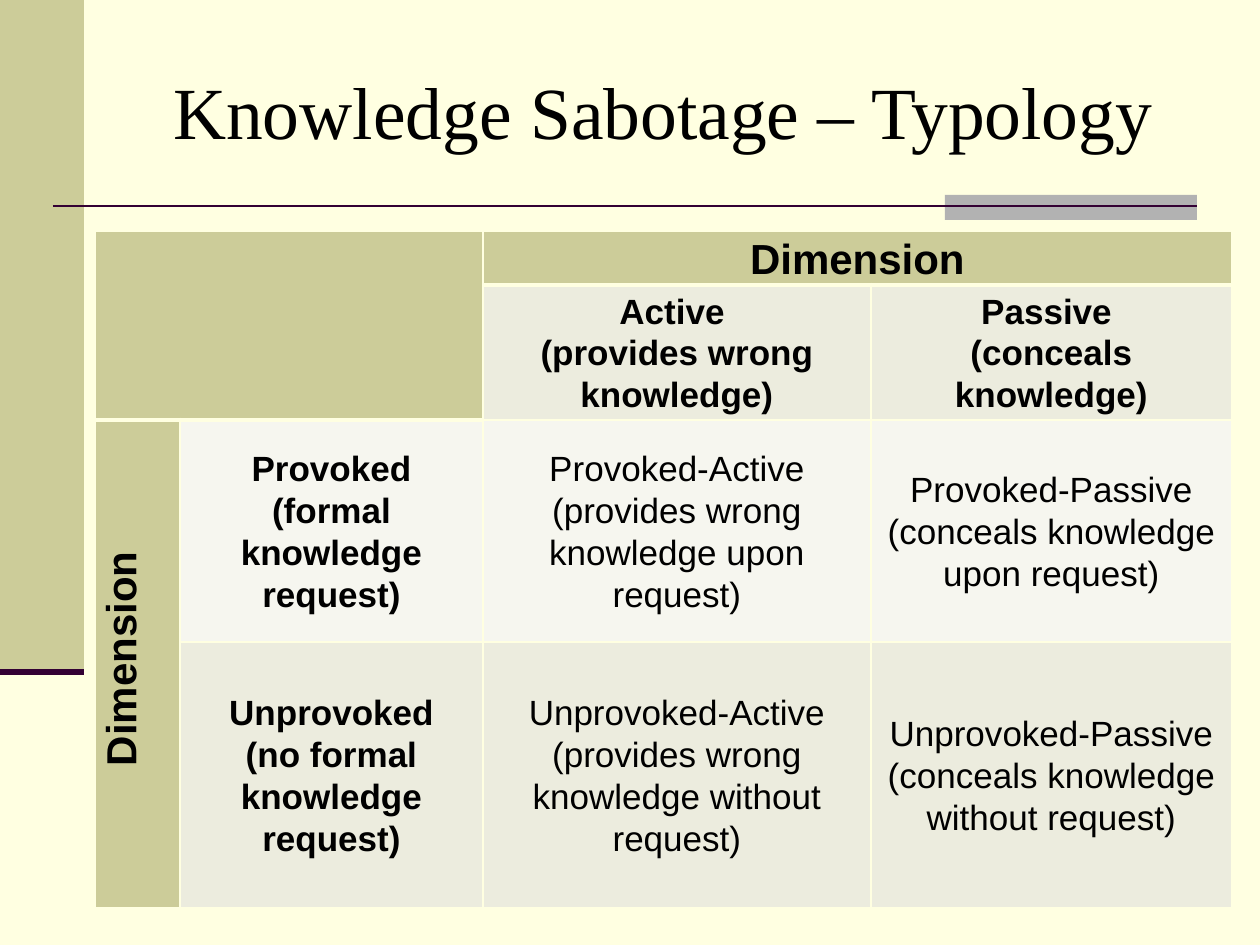
from lxml import etree
from pptx import Presentation
from pptx.dml.color import RGBColor
from pptx.enum.shapes import MSO_CONNECTOR, MSO_SHAPE
from pptx.enum.text import MSO_ANCHOR, PP_ALIGN
from pptx.oxml.ns import qn
from pptx.util import Pt

RECTANGLE = MSO_SHAPE.RECTANGLE
STRAIGHT = MSO_CONNECTOR.STRAIGHT
MIDDLE = MSO_ANCHOR.MIDDLE
CENTER = PP_ALIGN.CENTER

PX = 914400 // 126
CREAM = RGBColor(0xFF, 0xFF, 0xE1)
KHAKI = RGBColor(0xCC, 0xCC, 0x99)
GRAY = RGBColor(0xB2, 0xB2, 0xB2)
PLUM = RGBColor(0x33, 0x00, 0x33)
BLACK = RGBColor(0x00, 0x00, 0x00)
BAND_DARK = RGBColor(0xEC, 0xEC, 0xDE)
BAND_LIGHT = RGBColor(0xF6, 0xF6, 0xEF)

COLUMN_WIDTHS = [85, 303, 388, 361]
ROW_HEIGHTS = [48, 132, 222, 266]
SPANS = [((0, 0), (1, 1)), ((0, 2), (0, 3)), ((2, 0), (3, 0))]
THICK_BOTTOMS = {(0, 0), (0, 2), (0, 3), (1, 0), (1, 1)}
ROW_BANDS = [KHAKI, BAND_DARK, BAND_LIGHT, BAND_DARK]
TYPOLOGY = [
    [[], [], ["Dimension"], []],
    [[], [],
     ["Active ", "(provides wrong knowledge)"],
     ["Passive ", "(conceals knowledge)"]],
    [["Dimension"],
     ["Provoked", "(formal knowledge request)"],
     ["Provoked-Active", "(provides wrong knowledge upon request)"],
     ["Provoked-Passive", "(conceals knowledge upon request)"]],
    [[],
     ["Unprovoked", "(no formal knowledge request)"],
     ["Unprovoked-Active", "(provides wrong knowledge without request)"],
     ["Unprovoked-Passive", "(conceals knowledge without request)"]],
]


def scaled(*lengths):
    """Turn px lengths into EMU."""
    return [length * PX for length in lengths]


def write(frame, lines, size, font="Arial", bold=False, spacing=None):
    """Fill a text frame with one centred paragraph per line."""
    for index, line in enumerate(lines):
        paragraph = frame.add_paragraph() if index else frame.paragraphs[0]
        paragraph.alignment = CENTER
        paragraph.line_spacing = spacing
        run = paragraph.add_run()
        run.text = line
        run.font.name = font
        run.font.size = Pt(size)
        run.font.bold = bold
        run.font.color.rgb = BLACK


def add_block(slide, box, color):
    """Add a plain filled rectangle."""
    block = slide.shapes.add_shape(RECTANGLE, *scaled(*box))
    block.shadow.inherit = False
    block.fill.solid()
    block.fill.fore_color.rgb = color
    block.line.fill.background()


def add_rule(slide, left, top, width, weight):
    """Add a horizontal plum rule."""
    rule = slide.shapes.add_connector(STRAIGHT, *scaled(left, top, left + width, top))
    rule.line.color.rgb = PLUM
    rule.line.width = Pt(weight)
    etree.SubElement(rule._element.spPr, qn("a:effectLst"))


def add_decoration(slide, left, top, width, height):
    """Draw the side band, accent bar and rules inside the box."""
    band_width, band_height = 84, 672
    add_block(slide, (left, top, band_width, band_height), KHAKI)
    add_block(slide, (left + width - 315, top + 195, 252, 25), GRAY)
    add_rule(slide, left + 53, top + 206, width - 116, 1.5)
    add_rule(slide, left, top + band_height, band_width, 3.5)


def add_title(slide, left, top, width, height):
    """Place the slide title in the box."""
    title = slide.shapes.add_textbox(*scaled(left, top, width, height)).text_frame
    title.word_wrap = True
    title.vertical_anchor = MIDDLE
    write(title, ["Knowledge Sabotage – Typology"], 42, font="Times New Roman")


def set_borders(cell, bottom):
    """Give a cell cream borders, with its own bottom weight in points."""
    properties = cell._tc.get_or_add_tcPr()
    for side, weight in (("L", 1), ("R", 1), ("T", 1), ("B", bottom)):
        edge = etree.SubElement(properties, qn(f"a:ln{side}"), w=str(Pt(weight)))
        fill = etree.SubElement(edge, qn("a:solidFill"))
        etree.SubElement(fill, qn("a:srgbClr"), val=str(CREAM))


def format_cell(cell, row, column):
    """Style and fill one cell of the typology by its position."""
    lines = TYPOLOGY[row][column]
    is_axis = lines == ["Dimension"]
    is_corner = row < 2 and column < 2
    set_borders(cell, 3 if (row, column) in THICK_BOTTOMS else 1)
    cell.fill.solid()
    cell.fill.fore_color.rgb = KHAKI if is_corner or column == 0 else ROW_BANDS[row]
    cell.vertical_anchor = MIDDLE
    cell.margin_left, cell.margin_right = scaled(9, 9)
    cell.margin_top = cell.margin_bottom = 0
    write(cell.text_frame, lines, 24 if is_axis else 20,
          bold=row < 2 or column < 2, spacing=1.07)
    if is_axis and column == 0:
        cell._tc.get_or_add_tcPr().set("vert", "vert270")
        margin = cell.text_frame.paragraphs[0]._p.get_or_add_pPr()
        margin.set("marL", str(10 * PX))


def add_typology(slide, left, top, width, height):
    """Build the typology table in the box."""
    table = slide.shapes.add_table(
        len(ROW_HEIGHTS), len(COLUMN_WIDTHS), *scaled(left, top, width, height)).table
    for column, column_width in zip(table.columns, scaled(*COLUMN_WIDTHS)):
        column.width = column_width
    for row, row_height in zip(table.rows, scaled(*ROW_HEIGHTS)):
        row.height = row_height
    for first, last in SPANS:
        table.cell(*first).merge(table.cell(*last))
    for row in range(len(ROW_HEIGHTS)):
        for column in range(len(COLUMN_WIDTHS)):
            format_cell(table.cell(row, column), row, column)


def main():
    """Build and save the slide."""
    deck = Presentation()
    deck.slide_width, deck.slide_height = scaled(1260, 945)
    slide = deck.slides.add_slide(deck.slide_layouts[6])
    slide.background.fill.solid()
    slide.background.fill.fore_color.rgb = CREAM
    add_decoration(slide, 0, 0, 1260, 945)
    add_title(slide, 94, 32, 1138, 157)
    add_typology(slide, 95, 231, sum(COLUMN_WIDTHS), sum(ROW_HEIGHTS))
    deck.save("out.pptx")


if __name__ == "__main__":
    main()
